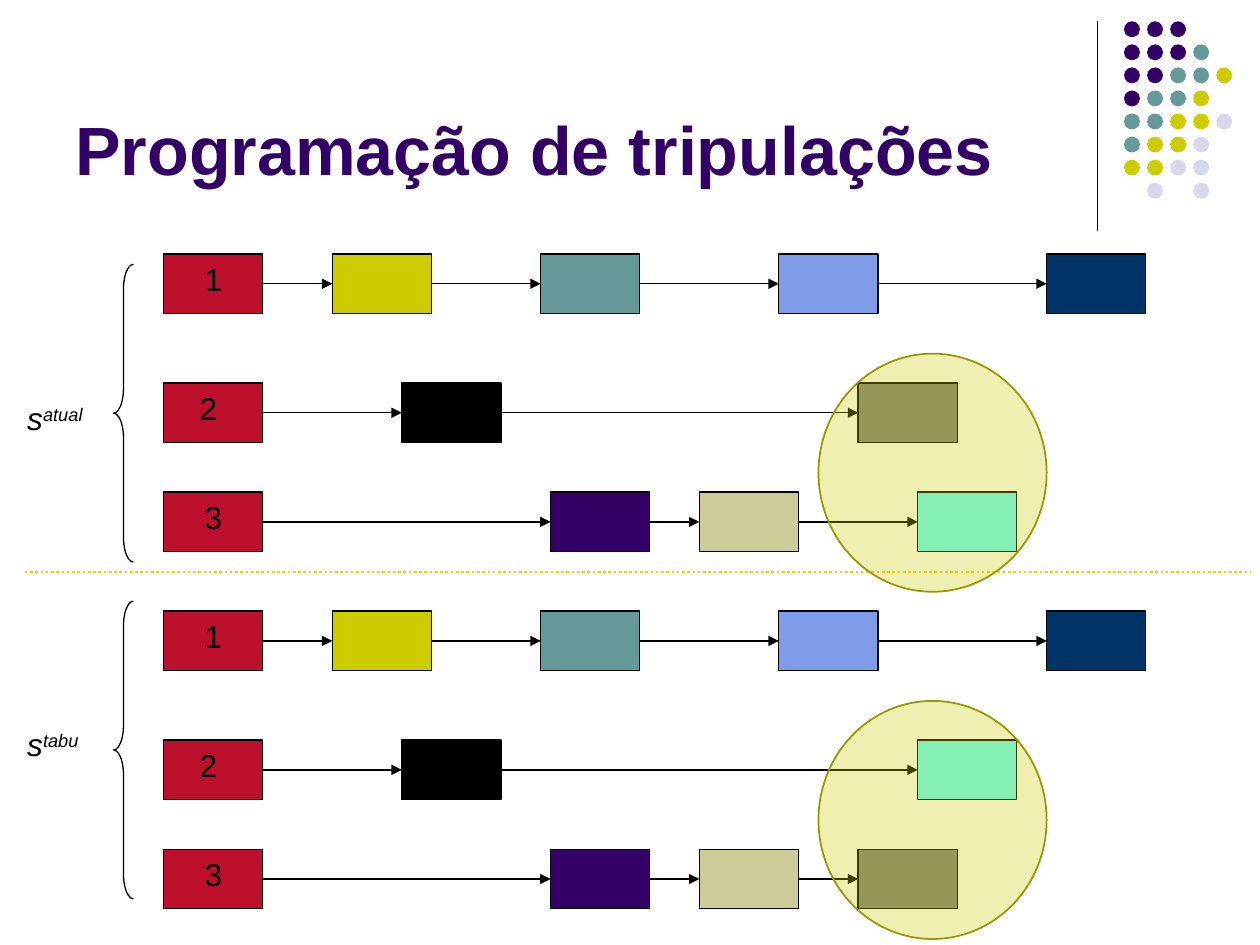
"""Build the crew scheduling slide with the current and tabu solutions."""
from lxml.etree import SubElement
from pptx import Presentation
from pptx.dml.color import RGBColor
from pptx.enum.dml import MSO_LINE
from pptx.enum.shapes import MSO_CONNECTOR, MSO_SHAPE
from pptx.enum.text import MSO_ANCHOR, PP_ALIGN
from pptx.oxml.ns import qn
from pptx.util import Cm, Pt

deck = Presentation()
deck.slide_width, deck.slide_height = Cm(25.4), Cm(19.05)
slide = deck.slides.add_slide(deck.slide_layouts[6])
color = RGBColor.from_string


def add_figure(kind, left, top, width, height, fill=None, outline=None, weight=0.75):
    figure = slide.shapes.add_shape(kind, Cm(left), Cm(top), Cm(width), Cm(height))
    figure.shadow.inherit = False
    if fill:
        figure.fill.solid()
        figure.fill.fore_color.rgb = color(fill)
    else:
        figure.fill.background()
    if outline:
        figure.line.color.rgb = color(outline)
        figure.line.width = Pt(weight)
    else:
        figure.line.fill.background()
    return figure


def add_line(x1, y1, x2, y2, stroke="000000", weight=0.75, arrow=False):
    line = slide.shapes.add_connector(
        MSO_CONNECTOR.STRAIGHT, Cm(x1), Cm(y1), Cm(x2), Cm(y2))
    line.line.color.rgb = color(stroke)
    line.line.width = Pt(weight)
    if arrow:
        SubElement(line.line._get_or_add_ln(), qn("a:tailEnd"), type="triangle")
    SubElement(line._element.spPr, qn("a:effectLst"))
    return line


add_line(22.12, 0.43, 22.12, 4.65)
dot_colors = {"P": "330066", "T": "669999", "Y": "CCCC00", "L": "D8D8EC"}
dot_rows = ["PPP", "PPPT", "PPTTY", "PTTY", "TTYYL", "TYYL", "YYLL", ".L.L"]
for row, dots in enumerate(dot_rows):
    for column, dot in enumerate(dots):
        if dot in dot_colors:
            add_figure(MSO_SHAPE.OVAL, 22.66 + 0.465 * column, 0.43 + 0.465 * row,
                       0.32, 0.32, dot_colors[dot])

task_width, task_height = 2, 1.2
crew_left = 3.3
first_crew = [(6.7, "CCCC00"), (10.9, "669999"), (15.7, "7E9CE8"), (21.1, "003366")]
second_crew = [(8.1, "000000")]
third_crew = [(11.1, "330066"), (14.1, "CCCC99")]
gray_task, cyan_task = (17.3, "808080"), (18.5, "66FFFF")
solutions = [
    (5.12, [first_crew, second_crew + [gray_task], third_crew + [cyan_task]]),
    (12.32, [first_crew, second_crew + [cyan_task], third_crew + [gray_task]]),
]
crew_offsets = [0, 2.6, 4.8]
number_boxes = [(3.7, 1.2), (3.5, 1.4), (3.7, 1.2)]

captions = [("Programação de tripulações", "", 1.27, 0.33, 20.96, 3.6)]
for solution_top, crews in solutions:
    for number, (crew, offset) in enumerate(zip(crews, crew_offsets), 1):
        top = solution_top + offset
        middle = top + task_height / 2
        tasks = [(crew_left, "BC102D")] + crew
        for left, fill in tasks:
            add_figure(MSO_SHAPE.RECTANGLE, left, top, task_width, task_height,
                       fill, "000000")
        for (start, _), (end, _) in zip(tasks, tasks[1:]):
            add_line(start + task_width, middle, end, middle, arrow=True)
        number_left, number_width = number_boxes[number - 1]
        captions.append((str(number), "", number_left, top, number_width, 1.02))

for name, label_top, brace_top in [("atual", 7.92, 5.33), ("tabu", 14.5, 12.12)]:
    brace = add_figure(MSO_SHAPE.LEFT_BRACE, 2.29, brace_top, 0.4, 6, outline="000000")
    brace.adjustments[0] = 1.246
    captions.append(("s", name, 0.3, label_top, 1.8, 1.02))

for text, superscript, left, top, width, height in captions:
    caption = slide.shapes.add_textbox(Cm(left), Cm(top), Cm(width), Cm(height))
    frame = caption.text_frame
    frame.word_wrap = True
    frame.text = text
    paragraph = frame.paragraphs[0]
    is_title = len(text) > 1
    if is_title:
        frame.vertical_anchor = MSO_ANCHOR.BOTTOM
    elif superscript:
        raised = paragraph.add_run()
        raised.text = superscript
        raised.font._element.set("baseline", "30000")
    else:
        paragraph.alignment = PP_ALIGN.CENTER
    for run in paragraph.runs:
        run.font.name = "Arial"
        run.font.size = Pt(39 if is_title else 18)
        run.font.bold = is_title
        run.font.italic = bool(superscript)
        run.font.color.rgb = color("330066" if is_title else "000000")

divider = add_line(0.5, 11.53, 25.2, 11.53, "FFCC00", 1.5)
divider.line.dash_style = MSO_LINE.ROUND_DOT

for top in (7.13, 14.13):
    highlight = add_figure(MSO_SHAPE.OVAL, 16.5, top, 4.6, 4.8, "CCCC00", "979700", 1)
    tint = highlight._element.spPr.find(qn("a:solidFill")).find(qn("a:srgbClr"))
    SubElement(tint, qn("a:alpha"), val="30000")

deck.save("out.pptx")
